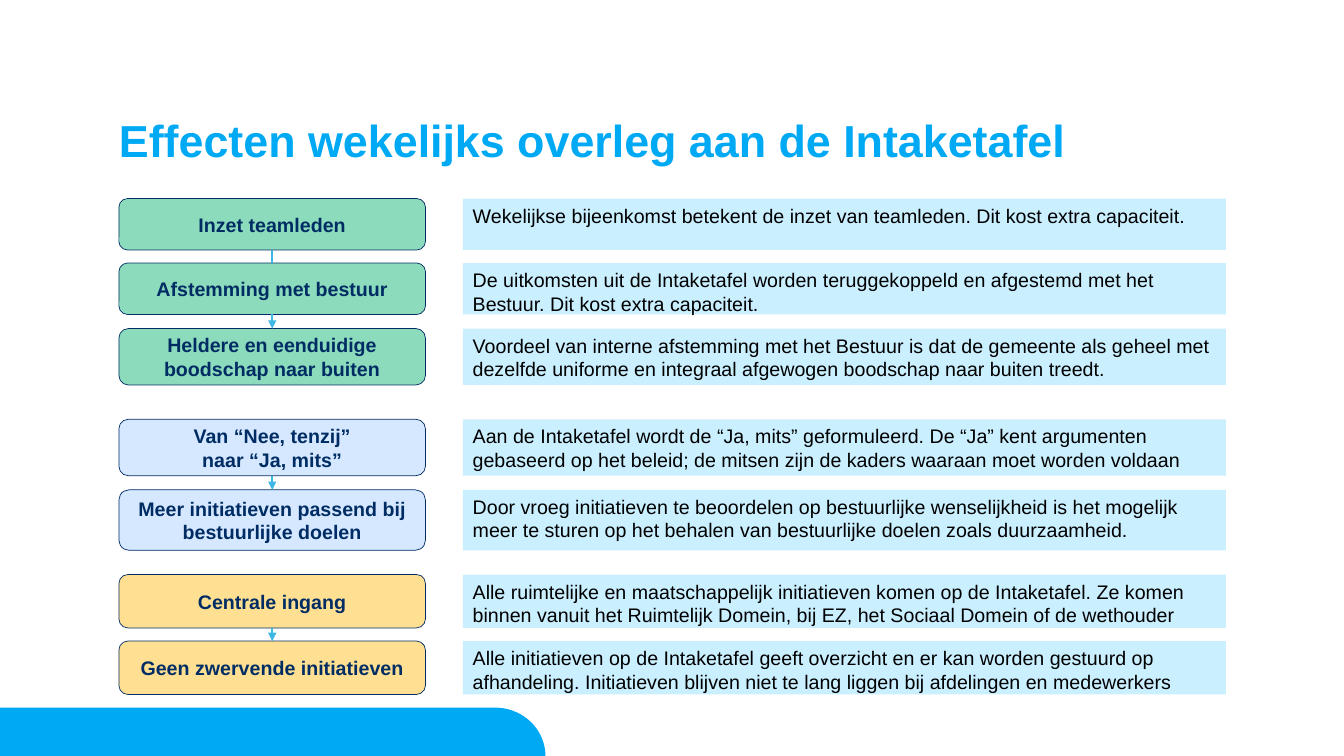
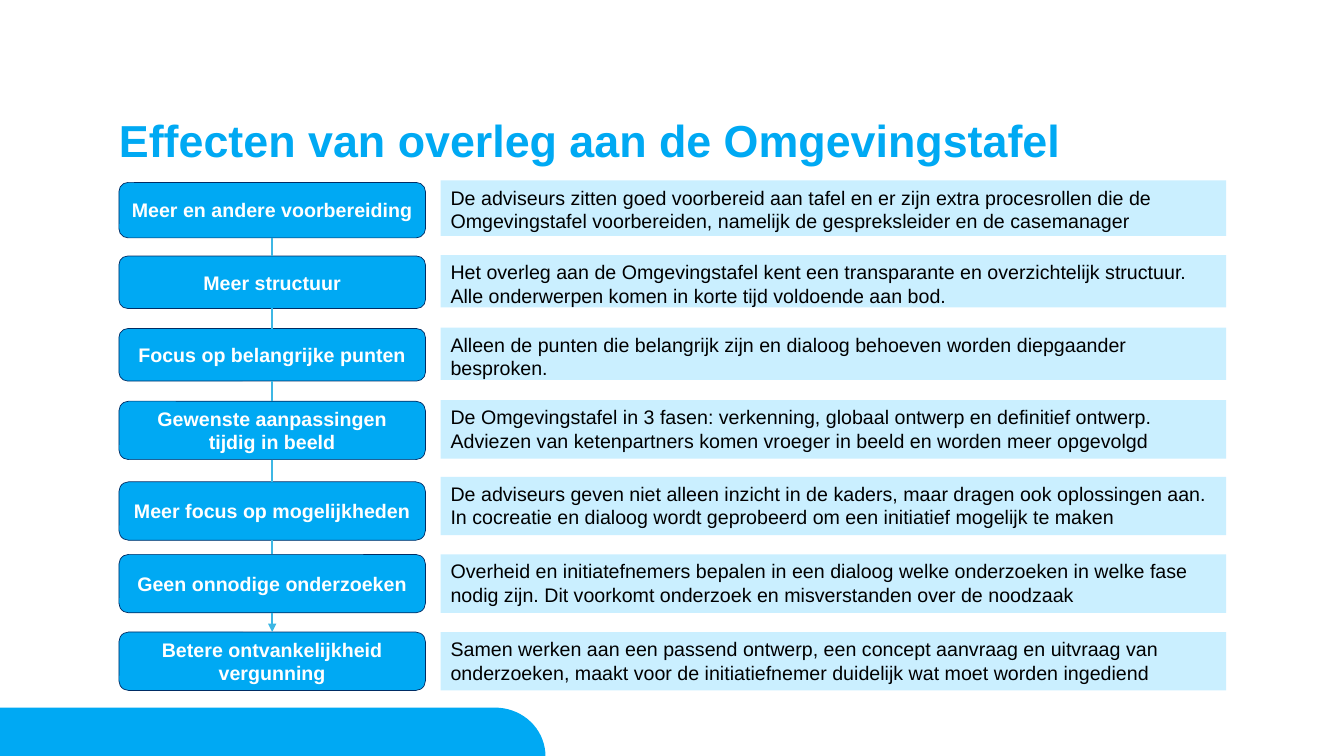
import math

import lxml.etree
import pptx
import pptx.dml.color
import pptx.enum.shapes
import pptx.enum.text
import pptx.oxml.ns
import pptx.util

Inches = pptx.util.Inches
Pt = pptx.util.Pt
RGBColor = pptx.dml.color.RGBColor
Shape = pptx.enum.shapes.MSO_SHAPE
Anchor = pptx.enum.text.MSO_ANCHOR
Align = pptx.enum.text.PP_ALIGN
qn = pptx.oxml.ns.qn

BRIGHT_BLUE = RGBColor(0x00, 0xA9, 0xF3)
NAVY = RGBColor(0x00, 0x2C, 0x64)
ARROW_BLUE = RGBColor(0x3D, 0xB7, 0xE4)
PALE_BLUE = RGBColor(0xCA, 0xEF, 0xFF)
GREEN = RGBColor(0x8C, 0xDB, 0xBC)
LAVENDER = RGBColor(0xD6, 0xE8, 0xFF)
YELLOW = RGBColor(0xFF, 0xE0, 0x93)
WHITE = RGBColor(0xFF, 0xFF, 0xFF)
BLACK = RGBColor(0x00, 0x00, 0x00)

FONT = "Arial"
LEFT = 1.18
LABEL_WIDTH = 3.04

TEAM_ROWS = [
    (1.97, 1.97, 0.51, "Inzet teamleden",
     "Wekelijkse bijeenkomst betekent de inzet van teamleden. Dit kost extra capaciteit."),
    (2.61, 2.61, 0.51, "Afstemming met bestuur",
     "De uitkomsten uit de Intaketafel worden teruggekoppeld en afgestemd met het "
     "Bestuur. Dit kost extra capaciteit."),
    (3.26, 3.26, 0.56, "Heldere en eenduidige boodschap naar buiten",
     "Voordeel van interne afstemming met het Bestuur is dat de gemeente als geheel met "
     "dezelfde uniforme en integraal afgewogen boodschap naar buiten treedt."),
]
POLICY_ROWS = [
    (4.16, 4.16, 0.56, "Van “Nee, tenzij”\nnaar “Ja, mits”",
     "Aan de Intaketafel wordt de “Ja, mits” geformuleerd. De “Ja” kent argumenten "
     "gebaseerd op het beleid; de mitsen zijn de kaders waaraan moet worden voldaan"),
    (4.86, 4.86, 0.6, "Meer initiatieven passend bij bestuurlijke doelen",
     "Door vroeg initiatieven te beoordelen op bestuurlijke wenselijkheid is het mogelijk "
     "meer te sturen op het behalen van bestuurlijke doelen zoals duurzaamheid."),
]
ENTRY_ROWS = [
    (5.7, 5.7, 0.53, "Centrale ingang",
     "Alle ruimtelijke en maatschappelijk initiatieven komen op de Intaketafel. Ze komen "
     "binnen vanuit het Ruimtelijk Domein, bij EZ, het Sociaal Domein of de wethouder"),
    (6.36, 6.36, 0.53, "Geen zwervende initiatieven",
     "Alle initiatieven op de Intaketafel geeft overzicht en er kan worden gestuurd op "
     "afhandeling. Initiatieven blijven niet te lang liggen bij afdelingen en medewerkers"),
]
OMGEVINGSTAFEL_ROWS = [
    (1.81, 1.79, 0.55, "Meer en andere voorbereiding",
     "De adviseurs zitten goed voorbereid aan tafel en er zijn extra procesrollen die de "
     "Omgevingstafel voorbereiden, namelijk de gespreksleider en de casemanager"),
    (2.54, 2.53, 0.52, "Meer structuur",
     "Het overleg aan de Omgevingstafel kent een transparante en overzichtelijk structuur. "
     "Alle onderwerpen komen in korte tijd voldoende aan bod."),
    (3.26, 3.25, 0.52, "Focus op belangrijke punten",
     "Alleen de punten die belangrijk zijn en dialoog behoeven worden diepgaander besproken."),
    (3.98, 3.97, 0.58, "Gewenste aanpassingen tijdig in beeld",
     "De Omgevingstafel in 3 fasen: verkenning, globaal ontwerp en definitief ontwerp. "
     "Adviezen van ketenpartners komen vroeger in beeld en worden meer opgevolgd"),
    (4.78, 4.73, 0.58, "Meer focus op mogelijkheden",
     "De adviseurs geven niet alleen inzicht in de kaders, maar dragen ook oplossingen aan. "
     "In cocreatie en dialoog wordt geprobeerd om een initiatief mogelijk te maken"),
    (5.5, 5.5, 0.58, "Geen onnodige onderzoeken",
     "Overheid en initiatefnemers bepalen in een dialoog welke onderzoeken in welke fase "
     "nodig zijn. Dit voorkomt onderzoek en misverstanden over de noodzaak"),
    (6.27, 6.27, 0.58, "Betere ontvankelijkheid vergunning",
     "Samen werken aan een passend ontwerp, een concept aanvraag en uitvraag van "
     "onderzoeken, maakt voor de initiatiefnemer duidelijk wat moet worden ingediend"),
]


def style_text(frame, size, color, bold, align):
    frame.word_wrap = True
    for para in frame.paragraphs:
        para.alignment = align
        para.font.name = FONT
        para.font.size = Pt(size)
        para.font.bold = bold
        para.font.color.rgb = color


def add_band(page):
    corner_x, bottom, radius_x, radius_y = 4.91, 7.5, 0.5, 0.48
    curve = []
    for degrees in range(0, 91, 5):
        angle = math.radians(degrees)
        curve.append((Inches(corner_x + radius_x * math.sin(angle)),
                      Inches(bottom - radius_y * math.cos(angle))))
    builder = page.shapes.build_freeform(0, Inches(bottom), scale=1.0)
    builder.add_line_segments([(0, Inches(bottom - radius_y))] + curve, close=True)
    band = builder.convert_to_shape()
    band.shadow.inherit = False
    band.fill.solid()
    band.fill.fore_color.rgb = BRIGHT_BLUE
    band.line.fill.background()


def add_page(deck, title_text):
    page = deck.slides.add_slide(deck.slide_layouts[5])
    add_band(page)
    title = page.shapes.title
    title.left, title.top = Inches(LEFT), Inches(1.18)
    title.width, title.height = Inches(10.97), Inches(0.79)
    frame = title.text_frame
    frame.text = title_text
    frame.auto_size = pptx.enum.text.MSO_AUTO_SIZE.NONE
    frame.vertical_anchor = Anchor.TOP
    frame.margin_left = frame.margin_top = frame.margin_right = frame.margin_bottom = 0
    frame.paragraphs[0].line_spacing = 0.9
    style_text(frame, 32, BRIGHT_BLUE, True, Align.LEFT)
    return page


def add_box(page, kind, left, top, width, height, fill, text):
    box = page.shapes.add_shape(kind, Inches(left), Inches(top), Inches(width), Inches(height))
    box.shadow.inherit = False
    box.fill.solid()
    box.fill.fore_color.rgb = fill
    box.text_frame.text = text
    return box


def add_label(page, top, height, fill, color, text):
    label = add_box(page, Shape.ROUNDED_RECTANGLE, LEFT, top, LABEL_WIDTH, height, fill, text)
    label.line.color.rgb = NAVY
    label.line.width = Pt(0.5)
    label.text_frame.vertical_anchor = Anchor.MIDDLE
    style_text(label.text_frame, 14, color, True, Align.CENTER)
    return label


def add_explanation(page, left, top, width, height, text):
    box = add_box(page, Shape.RECTANGLE, left, top, width, height, PALE_BLUE, text)
    box.line.fill.background()
    box.text_frame.vertical_anchor = Anchor.TOP
    style_text(box.text_frame, 14, BLACK, False, Align.LEFT)


def connect(page, upper, lower, arrow):
    connector = page.shapes.add_connector(pptx.enum.shapes.MSO_CONNECTOR.STRAIGHT, 0, 0, 0, 0)
    connector.begin_connect(upper, 2)
    connector.end_connect(lower, 0)
    connector.line.color.rgb = ARROW_BLUE
    connector.line.width = Pt(1.5)
    properties = connector.element.spPr
    if arrow:
        lxml.etree.SubElement(properties.find(qn("a:ln")), qn("a:tailEnd"), type="triangle")
    lxml.etree.SubElement(properties, qn("a:effectLst"))


def add_chain(page, rows, fill, color, text_left, text_width):
    labels = []
    for label_top, text_top, height, label, explanation in rows:
        labels.append(add_label(page, label_top, height, fill, color, label))
        add_explanation(page, text_left, text_top, text_width, height, explanation)
    for upper, lower in zip(labels, labels[1:]):
        connect(page, upper, lower, arrow=lower is labels[-1])


def main():
    deck = pptx.Presentation()
    deck.slide_width, deck.slide_height = Inches(13.33), Inches(7.5)

    page = add_page(deck, "Effecten wekelijks overleg aan de Intaketafel")
    for rows, fill in ((TEAM_ROWS, GREEN), (POLICY_ROWS, LAVENDER), (ENTRY_ROWS, YELLOW)):
        add_chain(page, rows, fill, NAVY, 4.59, 7.57)

    page = add_page(deck, "Effecten van overleg aan de Omgevingstafel")
    add_chain(page, OMGEVINGSTAFEL_ROWS, BRIGHT_BLUE, WHITE, 4.37, 7.79)

    deck.save("out.pptx")


if __name__ == "__main__":
    main()
